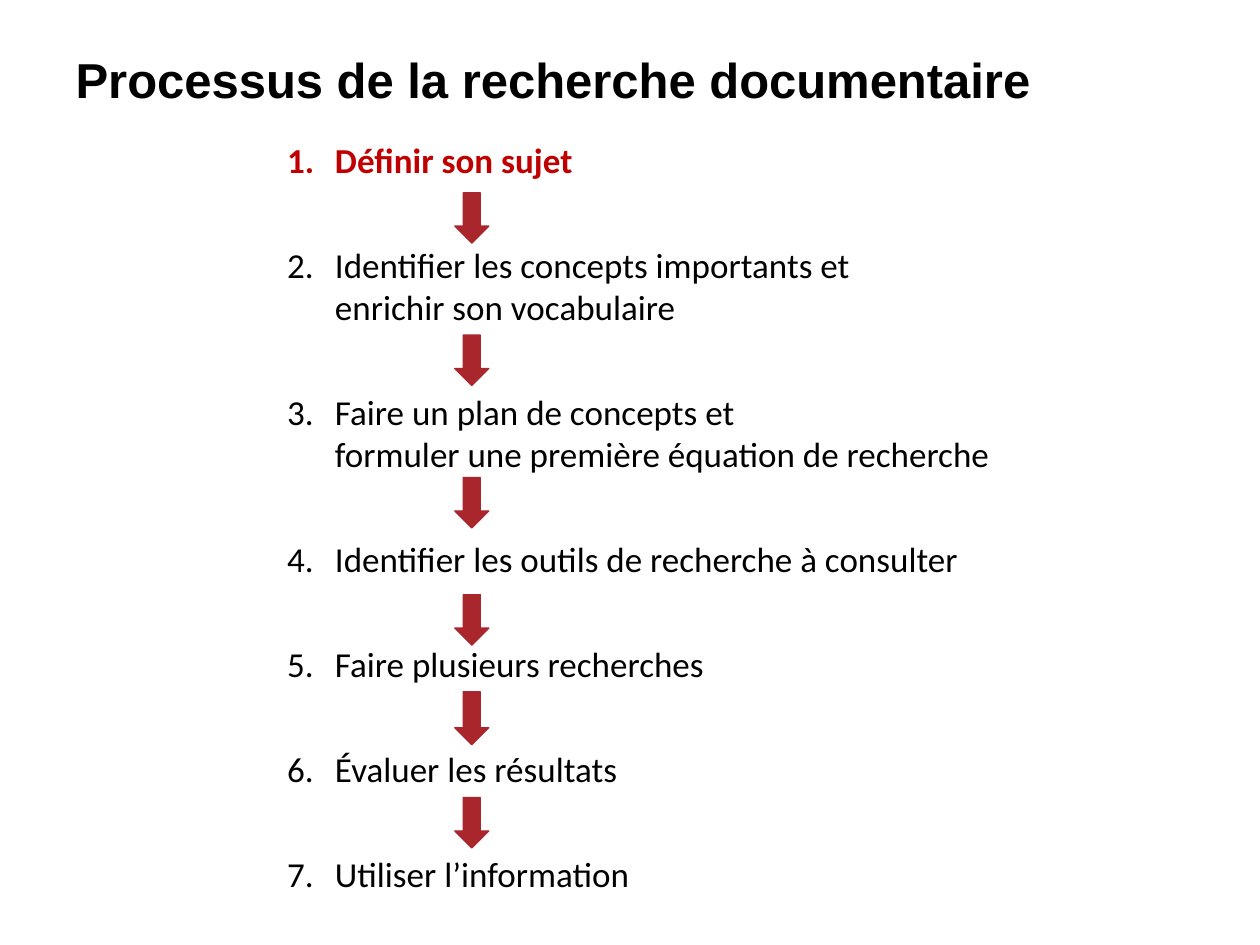
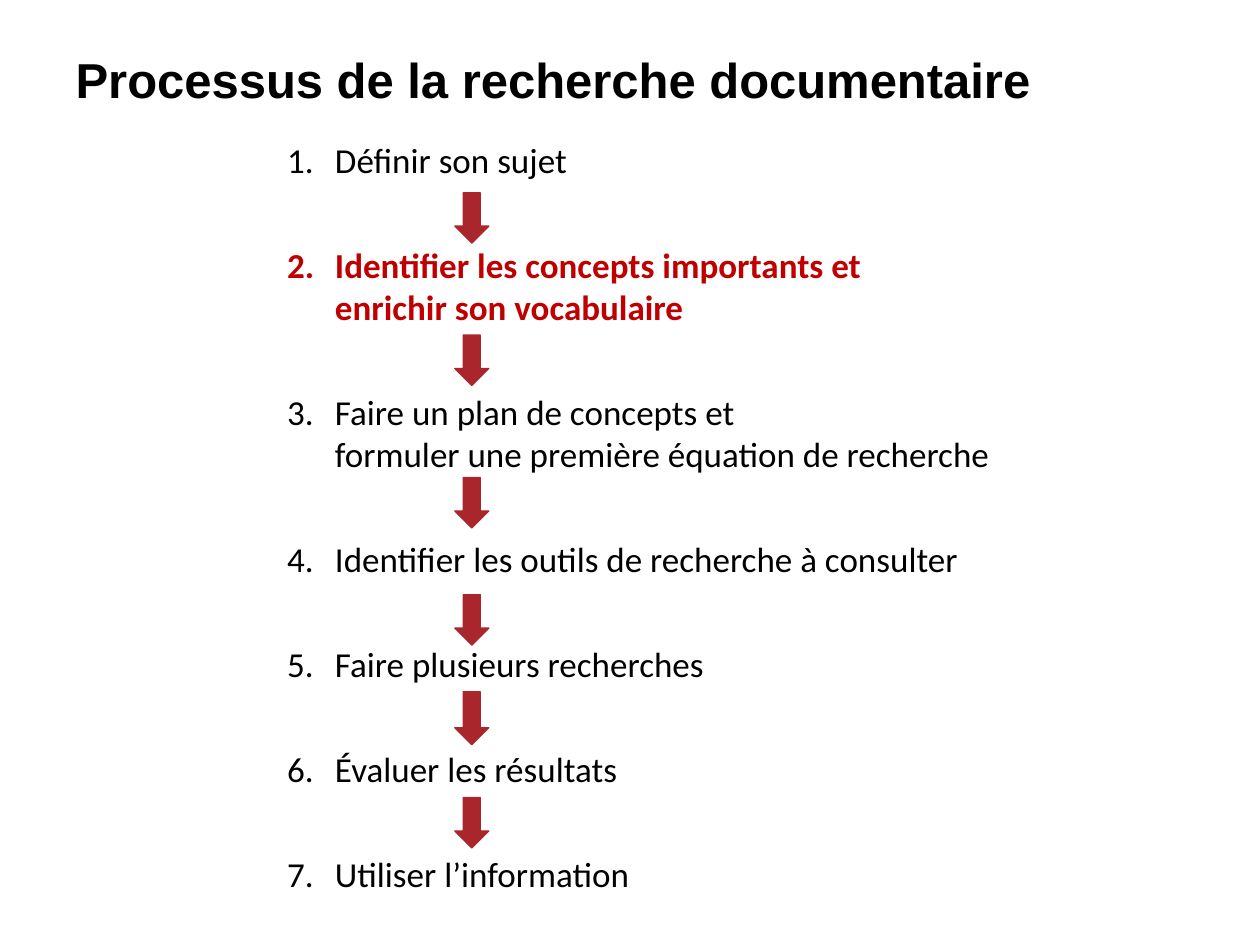
from lxml import etree
from pptx import Presentation
from pptx.dml.color import RGBColor
from pptx.enum.shapes import MSO_SHAPE
from pptx.enum.text import MSO_ANCHOR, PP_ALIGN
from pptx.oxml.ns import qn
from pptx.util import Pt

ARROW = MSO_SHAPE.DOWN_ARROW
LEFT = PP_ALIGN.LEFT
MIDDLE = MSO_ANCHOR.MIDDLE

SCALE = 9144
TITLE_ONLY = 5
BLACK, RED, BRICK = "000000", "C00000", "A9262D"
TITLE = "Processus de la recherche documentaire"
STEPS = [
    "Définir son sujet",
    "Identifier les concepts importants et \nenrichir son vocabulaire",
    "Faire un plan de concepts et \nformuler une première équation de recherche",
    "Identifier les outils de recherche à consulter",
    "Faire plusieurs recherches",
    "Évaluer les résultats",
    "Utiliser l’information",
]
ARROWS = [(153, 40), (266, 40), (379, 40), (472, 40), (549, 42), (633, 40)]


def px(count):
    return count * SCALE


def color(code):
    return RGBColor.from_string(code)


def style(para, face, size, code, bold):
    para.alignment = LEFT
    for run in para.runs:
        font = run.font
        font.name = face
        font.size = Pt(size)
        font.bold = bold
        font.color.rgb = color(code)


def number(para):
    props = para._p.get_or_add_pPr()
    props.set("marL", str(px(79)))
    props.set("indent", str(px(-38)))
    para.space_after = Pt(36)
    etree.SubElement(props, qn("a:buFont"), typeface="+mj-lt")
    etree.SubElement(props, qn("a:buAutoNum"), type="arabicPeriod")


def add_title(slide):
    title = slide.shapes.title
    title.left, title.top = px(50), px(0)
    title.width, title.height = px(900), px(125)
    frame = title.text_frame
    frame.text = TITLE
    frame.vertical_anchor = MIDDLE
    style(frame.paragraphs[0], "Arial", 28, BLACK, True)


def add_steps(slide, active):
    box = slide.shapes.add_textbox(px(177), px(105), px(691), px(627))
    frame = box.text_frame
    frame.word_wrap = True
    for index, step in enumerate(STEPS):
        para = frame.add_paragraph() if index else frame.paragraphs[0]
        para.text = step
        chosen = index == active
        style(para, "Calibri", 20, RED if chosen else BLACK, chosen)
        number(para)


def add_arrow(slide, top, height):
    arrow = slide.shapes.add_shape(ARROW, px(361), px(top), px(27), px(height))
    arrow.shadow.inherit = False
    arrow.fill.solid()
    arrow.fill.fore_color.rgb = color(BRICK)
    arrow.line.color.rgb = color(BRICK)
    arrow.line.width = Pt(0.75)


def add_process(deck, active):
    slide = deck.slides.add_slide(deck.slide_layouts[TITLE_ONLY])
    add_title(slide)
    add_steps(slide, active)
    for top, height in ARROWS:
        add_arrow(slide, top, height)


def main():
    deck = Presentation()
    deck.slide_width, deck.slide_height = px(1000), px(750)
    for active in range(2):
        add_process(deck, active)
    deck.save("out.pptx")


if __name__ == "__main__":
    main()
